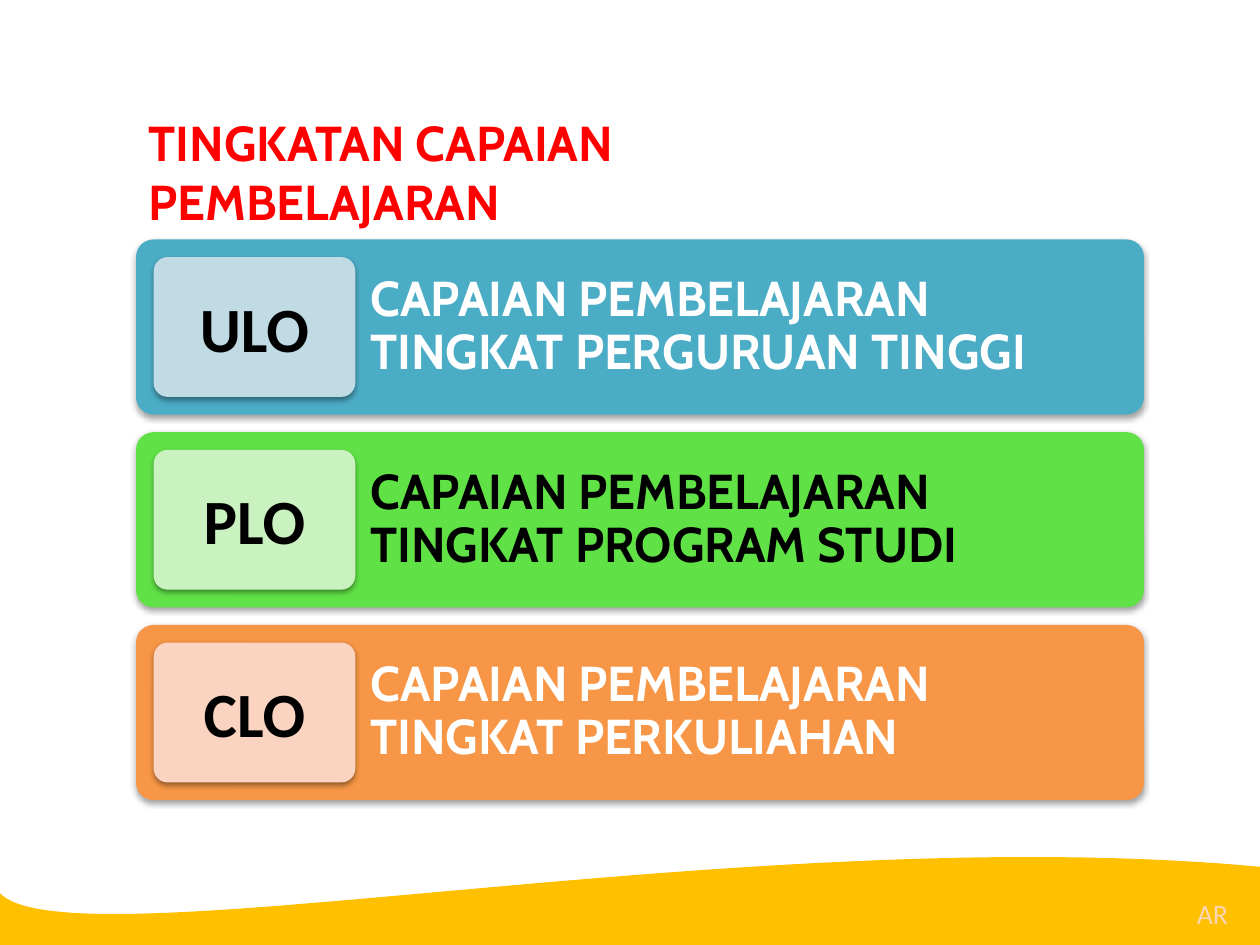
"""Build a slide showing the three levels of learning outcomes."""
from dataclasses import dataclass

import lxml.etree
import pptx
import pptx.dml.color
import pptx.enum.shapes
import pptx.enum.text
import pptx.oxml
import pptx.oxml.ns
import pptx.util
from pptx.util import Inches


@dataclass(frozen=True)
class Theme:
    heading_font: str = "Cabin"
    label_font: str = "Calibri"
    heading_size: int = 28
    label_size: int = 36
    initials_size: int = 16
    red: str = "FF0000"
    black: str = "000000"
    white: str = "FFFFFF"
    wave: str = "FFC000"
    initials: str = "FCD5B5"


theme = Theme()
rgb = pptx.dml.color.RGBColor.from_string
anchors = pptx.enum.text.MSO_ANCHOR
aligns = pptx.enum.text.PP_ALIGN


def add_shadow(properties, opacity, distance):
    effects = pptx.oxml.parse_xml(
        f'<a:effectLst {pptx.oxml.ns.nsdecls("a")}>'
        f'<a:outerShdw blurRad="{pptx.util.Pt(3.1)}" dist="{pptx.util.Pt(distance)}" '
        'dir="5400000" rotWithShape="0"><a:srgbClr val="000000">'
        f'<a:alpha val="{opacity * 1000}"/></a:srgbClr></a:outerShdw></a:effectLst>'
    )
    for old in properties.findall(pptx.oxml.ns.qn("a:effectLst")):
        properties.remove(old)
    latin = properties.find(pptx.oxml.ns.qn("a:latin"))
    if latin is None:
        properties.append(effects)
    else:
        latin.addprevious(effects)


def write(frame, text, font, size, color, bold=True, align=aligns.LEFT):
    frame.text = text
    paragraph = frame.paragraphs[0]
    paragraph.alignment = align
    paragraph.font.name = font
    paragraph.font.size = pptx.util.Pt(size)
    paragraph.font.bold = bold
    paragraph.font.color.rgb = rgb(color)
    return paragraph


deck = pptx.Presentation()
deck.slide_width, deck.slide_height = Inches(10), Inches(7.5)
slide = deck.slides.add_slide(deck.slide_layouts[5])

start, pull_left, pull_right, end = (0, 7.09), (0.56, 7.67), (5.96, 6.5), (10, 6.88)
steps = 80
crest = []
for step in range(steps + 1):
    t = step / steps
    weights = ((1 - t) ** 3, 3 * t * (1 - t) ** 2, 3 * t ** 2 * (1 - t), t ** 3)
    controls = (start, pull_left, pull_right, end)
    crest.append(tuple(
        Inches(sum(w * point[axis] for w, point in zip(weights, controls)))
        for axis in (0, 1)
    ))
outline = slide.shapes.build_freeform(*crest[0])
outline.add_line_segments(crest[1:] + [(Inches(10), Inches(7.5)), (0, Inches(7.5))])
wave = outline.convert_to_shape()
wave.shadow.inherit = False
wave.fill.solid()
wave.fill.fore_color.rgb = rgb(theme.wave)
wave.line.fill.background()

initials = slide.shapes.add_textbox(Inches(9.4), Inches(7.07), Inches(0.63), Inches(0.37))
initials.text_frame.word_wrap = False
write(initials.text_frame, "AR", theme.label_font, theme.initials_size,
      theme.initials, bold=False)

title = slide.shapes.title
title.left, title.top = Inches(1.08), Inches(0.84)
title.width, title.height = Inches(6.67), Inches(1.03)
title.text_frame.auto_size = pptx.enum.text.MSO_AUTO_SIZE.NONE
title.text_frame.vertical_anchor = anchors.TOP
heading = write(title.text_frame, "TINGKATAN CAPAIAN PEMBELAJARAN",
                theme.heading_font, theme.heading_size, theme.red)
add_shadow(heading.runs[0].font._element, 50, 3)

levels = [
    ("ULO", "PERGURUAN TINGGI", "4BACC6", "C1DBE5", theme.white),
    ("PLO", "PROGRAM STUDI", "60E146", "CAF1C0", theme.black),
    ("CLO", "PERKULIAHAN", "F79646", "FBD3C1", theme.white),
]
bar_left, bar_top, bar_width, bar_height, pitch = 1.08, 1.9, 8, 1.39, 1.53
margin, tile_width = 0.14, 1.6

for row, (code, scope, bar_color, tile_color, text_color) in enumerate(levels):
    top = bar_top + row * pitch
    panels = []
    for left, y, width, height, color, opacity, distance in (
        (bar_left, top, bar_width, bar_height, bar_color, 35, 1.8),
        (bar_left + margin, top + margin, tile_width, bar_height - 2 * margin,
         tile_color, 38, 1.6),
    ):
        panel = slide.shapes.add_shape(
            pptx.enum.shapes.MSO_SHAPE.ROUNDED_RECTANGLE,
            Inches(left), Inches(y), Inches(width), Inches(height))
        panel.adjustments[0] = 0.1
        panel.fill.solid()
        panel.fill.fore_color.rgb = rgb(color)
        panel.line.fill.background()
        panel.shadow.inherit = False
        add_shadow(panel._element.spPr, opacity, distance)
        panel.text_frame.word_wrap = True
        panel.text_frame.vertical_anchor = anchors.MIDDLE
        panels.append(panel)
    bar, tile = panels
    bar.text_frame.margin_left = Inches(1.82)
    bar.text_frame.margin_right = Inches(0.1)
    description = write(bar.text_frame, f"CAPAIAN PEMBELAJARAN TINGKAT {scope}",
                        theme.heading_font, theme.heading_size, text_color)
    description.line_spacing = 0.9
    write(tile.text_frame, code, theme.label_font, theme.label_size,
          theme.black, align=aligns.CENTER)

deck.save("out.pptx")
